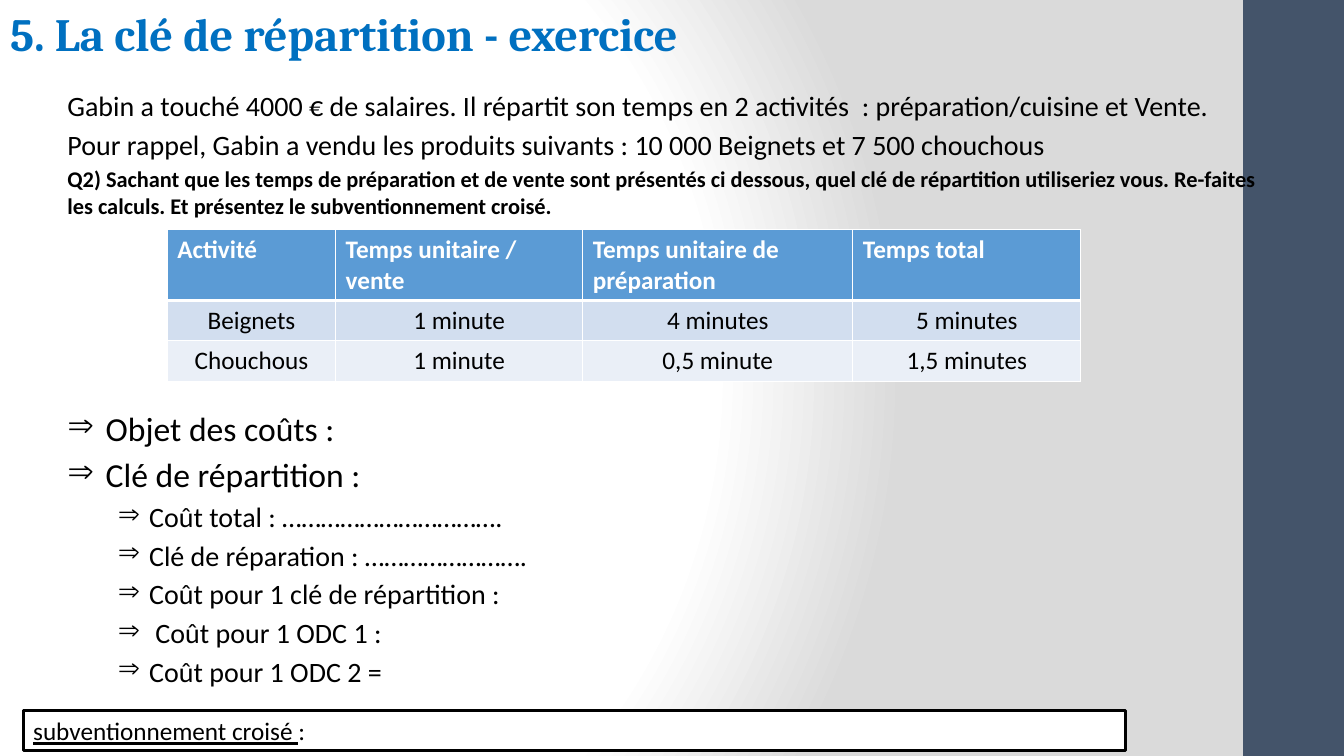
from lxml import etree
from pptx import Presentation
from pptx import util as u
from pptx.dml import color
from pptx.enum import shapes, text
from pptx.oxml import ns, parse_xml

WIDTH, HEIGHT = u.Inches(13.33), u.Inches(7.5)
BLACK, WHITE, BLUE, NAVY = "000000", "FFFFFF", "0070C0", "44546A"
ROW_FILLS = ["5B9BD5", "D2DEEF", "EAEFF7"]

INTRO = [
    ("Gabin a touché 4000 € de salaires. Il répartit son temps en 2 activités  : préparation/cuisine et Vente.", 20, False),
    ("Pour rappel, Gabin a vendu les produits suivants : 10 000 Beignets et 7 500 chouchous", 20, False),
    ("Q2) Sachant que les temps de préparation et de vente sont présentés ci dessous, quel clé de répartition "
     "utiliseriez vous. Re-faites les calculs. Et présentez le subventionnement croisé.", 16, True),
]
TIMES = [
    ["Activité", "Temps unitaire / vente", "Temps unitaire de préparation", "Temps total"],
    ["Beignets", "1 minute", "4 minutes", "5 minutes"],
    ["Chouchous", "1 minute", "0,5 minute", "1,5 minutes"],
]
ANSWERS = [
    ("Objet des coûts :", 0),
    ("Clé de répartition :", 0),
    ("Coût total : …………………………….", 1),
    ("Clé de réparation : …………………….", 1),
    ("Coût pour 1 clé de répartition :", 1),
    (" Coût pour 1 ODC 1 :", 1),
    ("Coût pour 1 ODC 2 =", 1),
]


def rgb(value):
    return color.RGBColor.from_string(value)


def area(left, top, width, height):
    return [int(side * share / 100) for side, share in
            zip((WIDTH, HEIGHT, WIDTH, HEIGHT), (left, top, width, height))]


def add_span(para, words, size, tint=BLACK, bold=False, underline=False, face="Calibri"):
    span = para.add_run()
    span.text = words
    span.font.name = face
    span.font.size = u.Pt(size)
    span.font.bold = bold
    span.font.underline = underline
    span.font.color.rgb = rgb(tint)


def next_para(frame, index, size):
    para = frame.paragraphs[0] if index == 0 else frame.add_paragraph()
    para.space_before = u.Pt(round(0.18 * size, 1) if index else 0)
    return para


def add_text_frame(page, place):
    frame = page.shapes.add_textbox(*place).text_frame
    frame.word_wrap = True
    return frame


def add_rectangle(page, place, fill, line=None):
    box = page.shapes.add_shape(shapes.MSO_SHAPE.RECTANGLE, *place)
    box.shadow.inherit = False
    box.fill.solid()
    box.fill.fore_color.rgb = rgb(fill)
    if line:
        box.line.color.rgb = rgb(line)
        box.line.width = u.Pt(2)
    else:
        box.line.fill.background()
    return box


def set_background(page):
    stops = "".join(f'<a:gs pos="{pos}000"><a:srgbClr val="{tint}"/></a:gs>'
                    for pos, tint in ((0, WHITE), (75, WHITE), (100, "DADADA")))
    page.element.cSld.insert(0, parse_xml(
        f'<p:bg {ns.nsdecls("p", "a")}><p:bgPr><a:gradFill rotWithShape="1"><a:gsLst>{stops}</a:gsLst>'
        '<a:path path="circle"><a:fillToRect l="20000" t="50000" r="100000" b="50000"/></a:path>'
        '</a:gradFill><a:effectLst/></p:bgPr></p:bg>'))


def set_title(page, words, place):
    title = page.shapes.title
    title.left, title.top, title.width, title.height = place
    frame = title.text_frame
    frame.vertical_anchor = text.MSO_ANCHOR.TOP
    para = frame.paragraphs[0]
    para.alignment = text.PP_ALIGN.LEFT
    add_span(para, words, 33, BLUE, bold=True, face="Cambria")


def add_intro(page, place):
    frame = add_text_frame(page, place)
    for index, (words, size, bold) in enumerate(INTRO):
        add_span(next_para(frame, index, size), words, size, bold=bold)


def add_answers(page, place):
    frame = add_text_frame(page, place)
    for index, (words, level) in enumerate(ANSWERS):
        size = 20 if level else 24
        margin, hang = (0.81, 0.31) if level else (0.38, 0.38)
        para = next_para(frame, index, size)
        para.level = level
        properties = para._p.get_or_add_pPr()
        properties.set("marL", str(u.Inches(margin)))
        properties.set("indent", str(-u.Inches(hang)))
        etree.SubElement(properties, ns.qn("a:buChar")).set("char", "⇒")
        add_span(para, words, size)


def set_borders(cell, bottom):
    properties = cell._tc.get_or_add_tcPr()
    for side, width in (("L", 1), ("R", 1), ("T", 1), ("B", bottom)):
        properties.append(parse_xml(
            f'<a:ln{side} {ns.nsdecls("a")} w="{u.Pt(width)}"><a:solidFill>'
            f'<a:srgbClr val="{WHITE}"/></a:solidFill></a:ln{side}>'))


def add_times_table(page, place):
    table = page.shapes.add_table(len(TIMES), len(TIMES[0]), *place).table
    for column, width in zip(table.columns, (1.67, 2.45, 2.68, 2.26)):
        column.width = u.Inches(width)
    for row, height in zip(table.rows, (0.7, 0.4, 0.4)):
        row.height = u.Inches(height)
    for row_index, (values, fill) in enumerate(zip(TIMES, ROW_FILLS)):
        header = row_index == 0
        for column_index, words in enumerate(values):
            cell = table.cell(row_index, column_index)
            set_borders(cell, 3 if header else 1)
            cell.fill.solid()
            cell.fill.fore_color.rgb = rgb(fill)
            para = cell.text_frame.paragraphs[0]
            para.alignment = text.PP_ALIGN.LEFT if header else text.PP_ALIGN.CENTER
            add_span(para, words, 18, WHITE if header else BLACK, bold=header)


def add_conclusion(page, place):
    frame = add_rectangle(page, place, WHITE, BLACK).text_frame
    frame.word_wrap = True
    para = frame.paragraphs[0]
    para.alignment = text.PP_ALIGN.LEFT
    add_span(para, "subventionnement croisé ", 18, underline=True)
    add_span(para, ":", 18)


def main():
    deck = Presentation()
    deck.slide_width, deck.slide_height = WIDTH, HEIGHT
    page = deck.slides.add_slide(deck.slide_layouts[5])
    set_background(page)
    add_rectangle(page, area(92.5, 0, 7.5, 100), NAVY)
    set_title(page, "5. La clé de répartition - exercice", area(0, 0, 67.5, 12.4))
    add_intro(page, area(4.28, 11.07, 91.9, 18.5))
    add_answers(page, area(4.28, 53.3, 60, 39.5))
    add_conclusion(page, area(1.73, 94, 82, 5.33))
    add_times_table(page, area(12.45, 30.4, 67.97, 20))
    deck.save("out.pptx")


if __name__ == "__main__":
    main()
